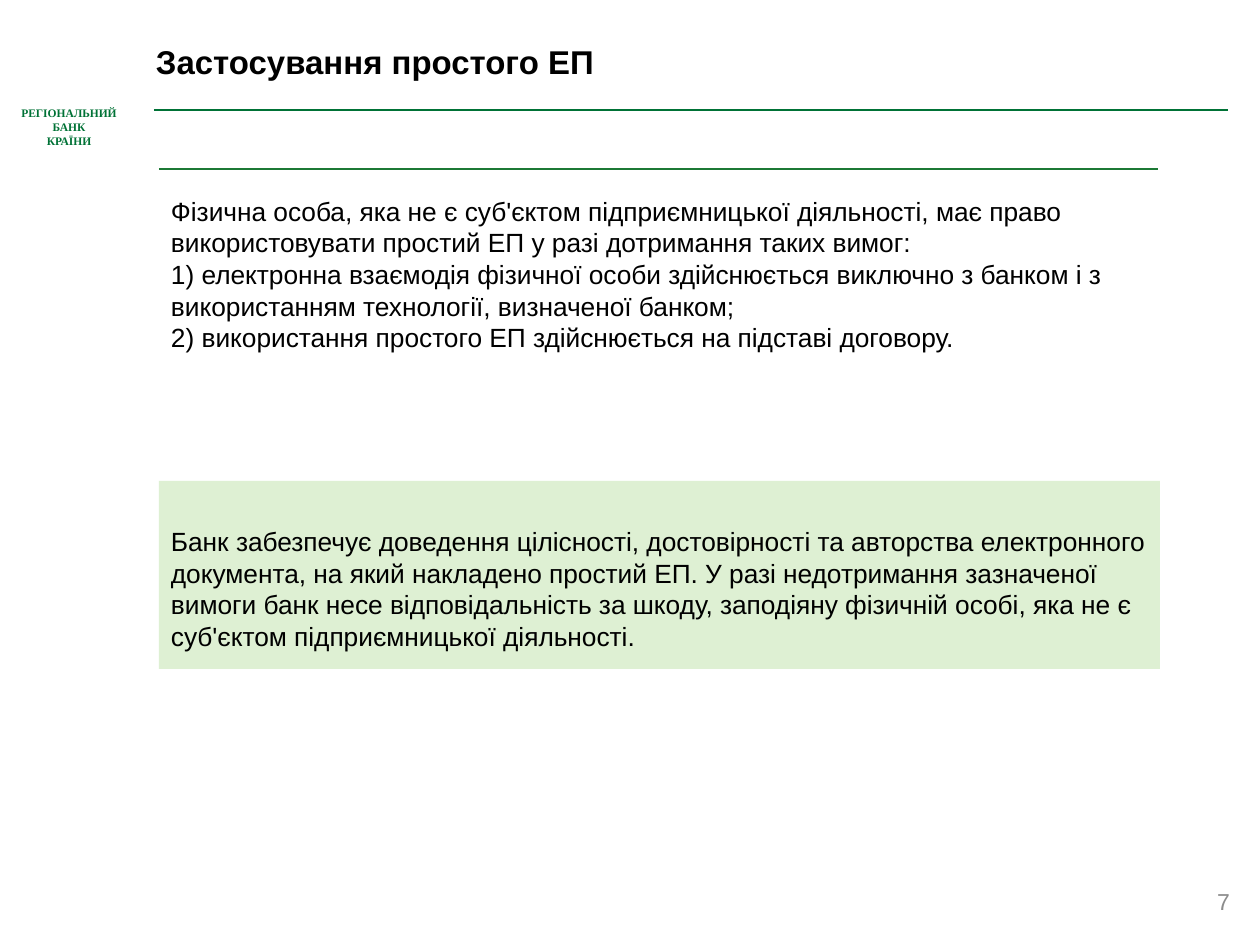
import pptx
import pptx.util
import pptx.dml.color
import pptx.enum.shapes
import pptx.enum.text
import pptx.oxml

RGBColor = pptx.dml.color.RGBColor
ALIGN = pptx.enum.text.PP_ALIGN
ANCHOR = pptx.enum.text.MSO_ANCHOR

PX = 914400 / 118.5
BRAND_GREEN = RGBColor(0x00, 0x72, 0x36)
RULE_GREEN = RGBColor(0x1C, 0x79, 0x35)
PALE_GREEN = RGBColor(0xDE, 0xF0, 0xD3)
BLACK = RGBColor(0x00, 0x00, 0x00)
GRAY = RGBColor(0x8C, 0x8C, 0x8C)

BANK_NAME = ["РЕГІОНАЛЬНИЙ", "БАНК", "КРАЇНИ"]
CONDITIONS = [
    "Фізична особа, яка не є суб'єктом підприємницької діяльності, має право "
    "використовувати простий ЕП у разі дотримання таких вимог:",
    "1) електронна взаємодія фізичної особи здійснюється виключно з банком і з "
    "використанням технології, визначеної банком;",
    "2) використання простого ЕП здійснюється на підставі договору.",
]
BANK_DUTY = [
    "Банк забезпечує доведення цілісності, достовірності та авторства "
    "електронного документа, на який накладено простий ЕП. У разі недотримання "
    "зазначеної вимоги банк несе відповідальність за шкоду, заподіяну фізичній "
    "особі, яка не є суб'єктом підприємницької діяльності.",
]


def emu(px):
    return pptx.util.Emu(round(px * PX))


def write(shape, lines, size, color=BLACK, font="Arial", bold=False,
          align=ALIGN.LEFT, anchor=ANCHOR.MIDDLE, insets=(12, 6, 12, 6)):
    frame = shape.text_frame
    frame.word_wrap = True
    frame.vertical_anchor = anchor
    (frame.margin_left, frame.margin_top,
     frame.margin_right, frame.margin_bottom) = map(emu, insets)
    frame.text = "\n".join(lines)
    for paragraph in frame.paragraphs:
        paragraph.alignment = align
        paragraph.font.name = font
        paragraph.font.size = pptx.util.Pt(size)
        paragraph.font.bold = bold
        paragraph.font.color.rgb = color


def add_text(slide, box, lines, size, **style):
    write(slide.shapes.add_textbox(*map(emu, box)), lines, size, **style)


def add_panel(slide, box, lines, size, fill, **style):
    panel = slide.shapes.add_shape(
        pptx.enum.shapes.MSO_SHAPE.RECTANGLE, *map(emu, box))
    panel.shadow.inherit = False
    panel.fill.solid()
    panel.fill.fore_color.rgb = fill
    panel.line.fill.background()
    write(panel, lines, size, **style)


def add_rule(slide, left, right, y, color, width):
    rule = slide.shapes.add_connector(
        pptx.enum.shapes.MSO_CONNECTOR.STRAIGHT,
        emu(left), emu(y), emu(right), emu(y))
    rule.line.color.rgb = color
    rule.line.width = pptx.util.Pt(width)
    rule._element.spPr.append(pptx.oxml.parse_xml(
        '<a:effectLst xmlns:a='
        '"http://schemas.openxmlformats.org/drawingml/2006/main"/>'))


def main():
    deck = pptx.Presentation()
    deck.slide_width, deck.slide_height = emu(1260), emu(933)
    slide = deck.slides.add_slide(deck.slide_layouts[6])

    # Header
    add_text(slide, (4, 100, 130, 53), BANK_NAME, 7, color=BRAND_GREEN,
             font="Times New Roman", bold=True, align=ALIGN.CENTER,
             anchor=ANCHOR.TOP)
    add_rule(slide, 154, 1228, 110, BRAND_GREEN, 0.75)
    add_text(slide, (156, 0, 1057, 123), ["Застосування простого ЕП"], 20,
             bold=True, insets=(0, 0, 0, 0))

    # Conditions for using the simple signature
    add_rule(slide, 159, 1158, 169, RULE_GREEN, 1)
    add_text(slide, (159, 186, 999, 205), CONDITIONS, 16,
             insets=(12, 6, 12, 35))

    # Duty of the bank
    add_panel(slide, (159, 481, 1001, 188), BANK_DUTY, 16, PALE_GREEN,
              insets=(12, 33, 12, 6))

    # Page number
    add_text(slide, (1134, 859, 109, 62), ["7"], 14, color=GRAY,
             align=ALIGN.RIGHT, anchor=ANCHOR.BOTTOM, insets=(13, 6, 13, 6))

    deck.save("out.pptx")


if __name__ == "__main__":
    main()
